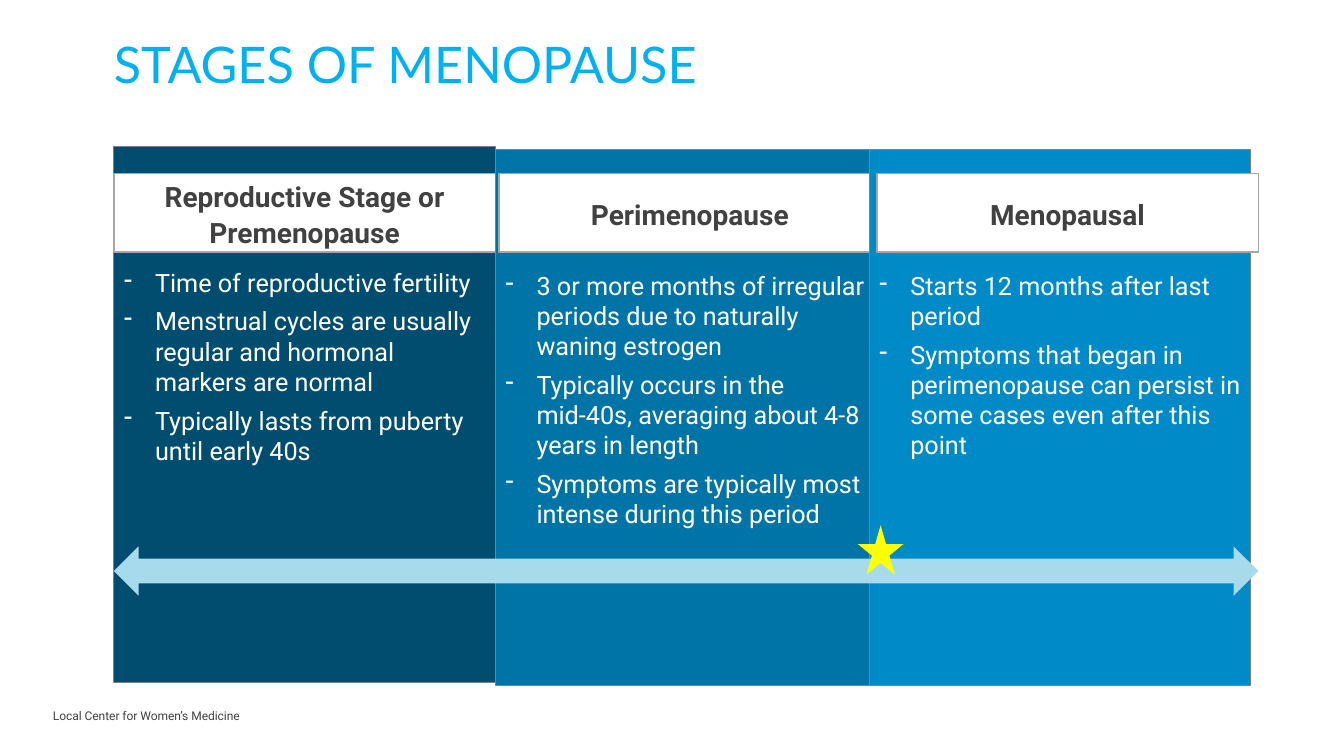
import pptx
import pptx.dml.color
import pptx.enum.shapes
import pptx.enum.text
import pptx.oxml
import pptx.oxml.ns
import pptx.util

RGBColor = pptx.dml.color.RGBColor
Inches = pptx.util.Inches
Pt = pptx.util.Pt
SHAPE = pptx.enum.shapes.MSO_SHAPE
ALIGN = pptx.enum.text.PP_ALIGN
ANCHOR = pptx.enum.text.MSO_ANCHOR

WHITE = RGBColor(0xFF, 0xFF, 0xFF)
CHARCOAL = RGBColor(0x41, 0x41, 0x41)
TITLE_BLUE = RGBColor(0x00, 0xB0, 0xF0)
NAVY = RGBColor(0x00, 0x4D, 0x70)
TEAL = RGBColor(0x00, 0x74, 0xA7)
AZURE = RGBColor(0x00, 0x8A, 0xC8)
PALE_BLUE = RGBColor(0xA7, 0xDB, 0xEC)
YELLOW = RGBColor(0xFF, 0xFF, 0x00)
PANEL_LINE = RGBColor(0x80, 0x80, 0x80)
HEADING_LINE = RGBColor(0xA6, 0xA6, 0xA6)

STAGES = [
    (0, 14.5, NAVY, 0, "Reproductive Stage or Premenopause", [
        "Time of reproductive fertility",
        "Menstrual cycles are usually regular and hormonal markers are normal",
        "Typically lasts from puberty until early 40s",
    ]),
    (1, 14.8, TEAL, 1.01, "Perimenopause", [
        "3 or more months of irregular periods due to naturally waning estrogen",
        "Typically occurs in the mid-40s, averaging about 4-8 years in length",
        "Symptoms are typically most intense during this period",
    ]),
    (1.98, 14.8, AZURE, 2, "Menopausal", [
        "Starts 12 months after last period",
        "Symptoms that began in perimenopause can persist in some cases even after this point",
    ]),
]


class StageSlide:
    body_font = "Roboto"
    title_font = "Lato"
    margin = Inches(1.13)
    column = Inches(11.35) / 3
    row = Inches(0.1)

    def __init__(self, presentation):
        self.slide = presentation.slides.add_slide(presentation.slide_layouts[5])

    def box(self, column, row, columns, rows):
        return (round(self.margin + column * self.column), round(row * self.row),
                round(columns * self.column), round(rows * self.row))

    def frame(self, shape, anchor, insets):
        frame = shape.text_frame
        frame.word_wrap = True
        frame.auto_size = pptx.enum.text.MSO_AUTO_SIZE.NONE
        frame.vertical_anchor = anchor
        frame.margin_left, frame.margin_top, frame.margin_right, frame.margin_bottom = map(Inches, insets)
        return frame

    def run(self, paragraph, text, size, color, font=body_font, bold=False):
        run = paragraph.add_run()
        run.text = text
        run.font.name = font
        run.font.size = Pt(size)
        run.font.bold = bold
        run.font.color.rgb = color
        return run

    def title(self, text):
        title = self.slide.shapes.title
        title.left, title.top, title.width, title.height = self.box(0, 0.9, 3, 10.7)
        paragraph = self.frame(title, ANCHOR.MIDDLE, (0, 0, 1.5, 0)).paragraphs[0]
        paragraph.alignment = ALIGN.LEFT
        self.run(paragraph, text, 36, TITLE_BLUE, self.title_font)

    def footer(self, text):
        footer = self.slide.shapes.add_textbox(*self.box(-0.16, 69.8, 0.62, 1.7))
        paragraph = self.frame(footer, ANCHOR.TOP, (0, 0, 0, 0)).paragraphs[0]
        paragraph.line_spacing = 1.1
        paragraph.space_after = Pt(12)
        run = self.run(paragraph, text, 14.8, CHARCOAL)
        run._r.get_or_add_rPr().set("baseline", "30000")

    def shape(self, kind, place, fill, line=None, weight=1):
        shape = self.slide.shapes.add_shape(kind, *self.box(*place))
        shape.shadow.inherit = False
        shape.fill.solid()
        shape.fill.fore_color.rgb = fill
        if line is None:
            shape.line.fill.background()
        else:
            shape.line.color.rgb = line
            shape.line.width = Pt(weight)
        return shape

    def panel(self, column, row, fill, points):
        panel = self.shape(SHAPE.RECTANGLE, (column, row, 1, 53.2), fill, PANEL_LINE, 0.75)
        frame = self.frame(panel, ANCHOR.TOP, (0.1, 1.2, 0.1, 0))
        for index, point in enumerate(points):
            paragraph = frame.add_paragraph() if index else frame.paragraphs[0]
            properties = paragraph._p.get_or_add_pPr()
            properties.set("marL", str(Inches(0.31)))
            properties.set("indent", str(-Inches(0.31)))
            bullet = pptx.oxml.parse_xml(f'<a:buChar {pptx.oxml.ns.nsdecls("a")} char="-"/>')
            properties.append(bullet)
            paragraph.alignment = ALIGN.LEFT
            paragraph.space_after = Pt(6)
            self.run(paragraph, point, 18, WHITE)

    def heading(self, column, text):
        heading = self.shape(SHAPE.RECTANGLE, (column, 17.2, 1, 7.8), WHITE, HEADING_LINE)
        paragraph = self.frame(heading, ANCHOR.MIDDLE, (0.1, 0.05, 0.1, 0.05)).paragraphs[0]
        paragraph.alignment = ALIGN.CENTER
        paragraph.line_spacing = 1.07
        paragraph.space_after = Pt(8)
        self.run(paragraph, text, 20, CHARCOAL, bold=True)


def main():
    presentation = pptx.Presentation()
    presentation.slide_width = Inches(13.33)
    presentation.slide_height = Inches(7.5)
    stages = StageSlide(presentation)
    stages.footer("Local Center for Women’s Medicine")
    stages.title("STAGES OF MENOPAUSE")
    for column, row, fill, heading_column, name, points in STAGES:
        stages.panel(column, row, fill, points)
        stages.heading(heading_column, name)
    stages.shape(SHAPE.LEFT_RIGHT_ARROW, (0, 54.2, 3, 4.9), PALE_BLUE)
    stages.shape(SHAPE.STAR_5_POINT, (1.95, 52.1, 0.12, 4.9), YELLOW)
    presentation.save("out.pptx")


if __name__ == "__main__":
    main()
